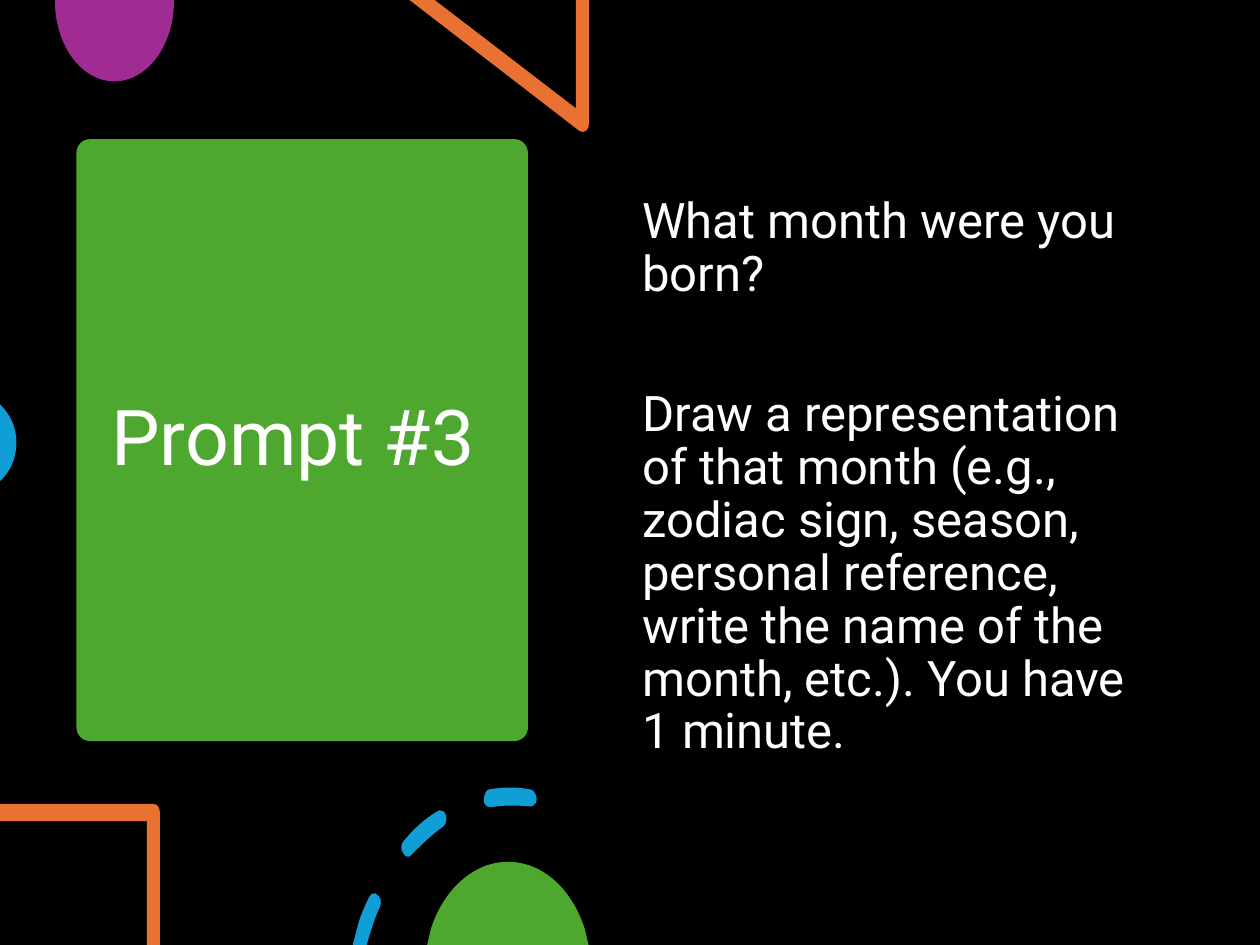
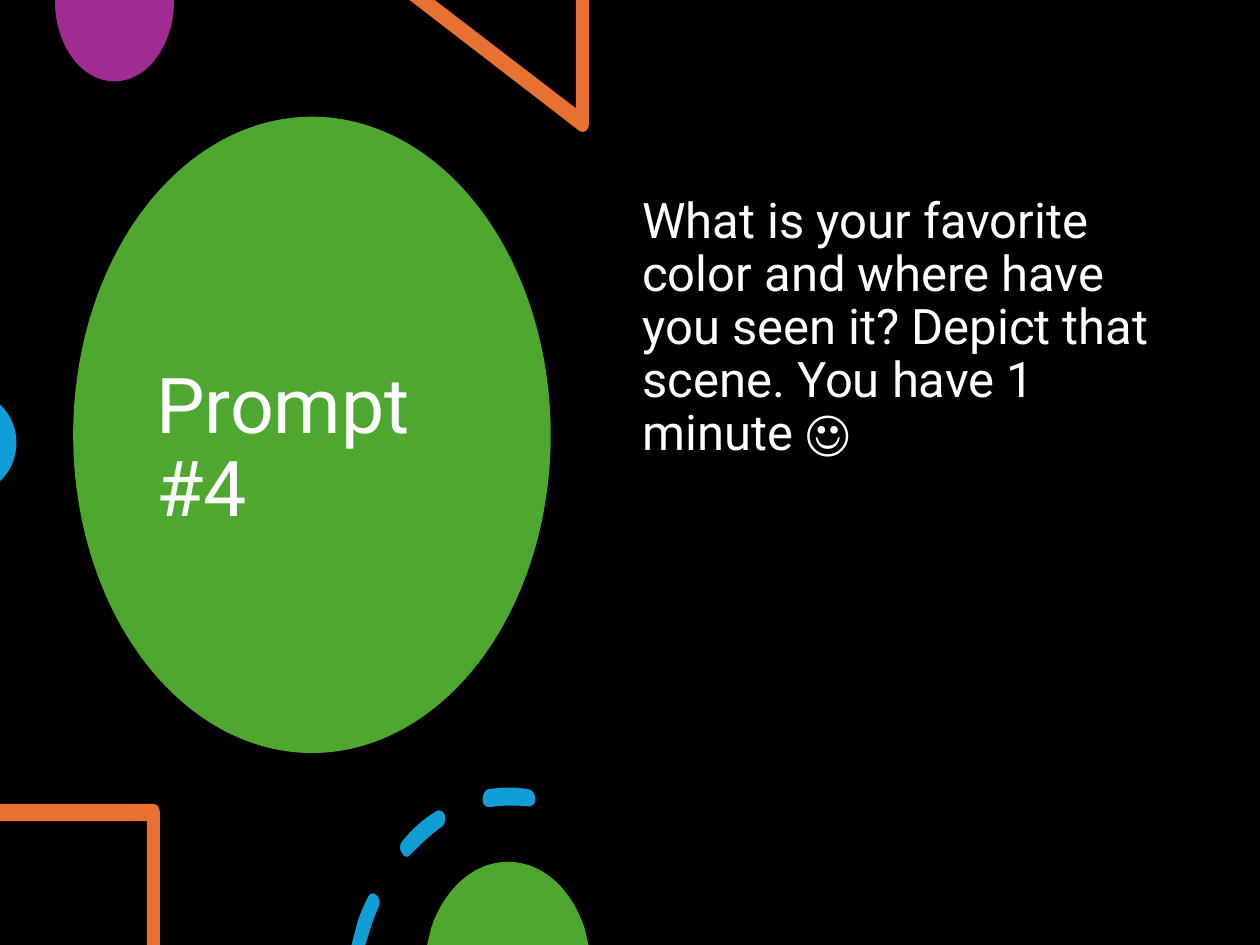
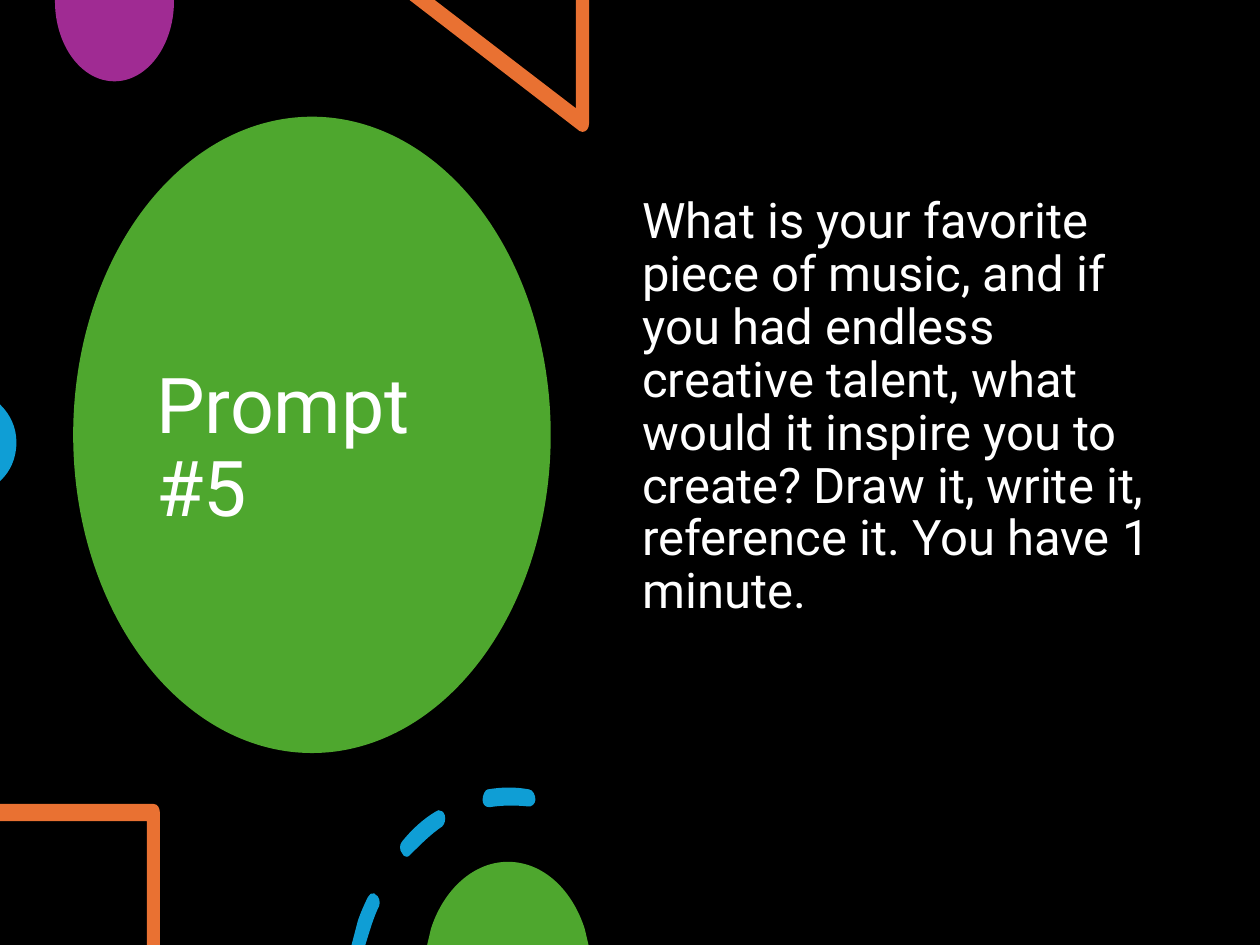
from pptx import Presentation
from pptx.dml.color import RGBColor
from pptx.enum.shapes import MSO_SHAPE
from pptx.enum.text import MSO_ANCHOR, MSO_AUTO_SIZE, PP_ALIGN
from pptx.oxml.ns import qn
from pptx.util import Pt

ELLIPSE = MSO_SHAPE.OVAL
ROUNDED = MSO_SHAPE.ROUNDED_RECTANGLE
MIDDLE, TOP = MSO_ANCHOR.MIDDLE, MSO_ANCHOR.TOP
LEFT = PP_ALIGN.LEFT
NO_FIT = MSO_AUTO_SIZE.NONE

BLACK, WHITE = "000000", "FFFFFF"
GREEN, PURPLE, ORANGE, BLUE = "4EA72E", "A02B93", "E97132", "0F9ED5"
FONT = "Roboto"
TITLE_SIZE, BODY_SIZE = 44, 28
TITLE_ONLY = 5

# Contours are relative to the part's box: pairs are corners,
# six numbers are a Bezier curve (two controls, then its end).
HALF_DISC = [[(68, 0), (0, 0), (0, 0.7), (0, 25.9, 15.1, 46.5, 34, 46.5),
              (52.8, 46.5, 68, 25.9, 68, 0.7)]]
TRIANGLE = [[(102.6, 0), (95.1, 0), (95.1, 61.9), (14.4, 0), (0, 0),
             (97.2, 74.9), (97.9, 75.4, 98.2, 75.4, 98.9, 75.4),
             (101, 75.4, 102.6, 73.4, 102.6, 70.6)]]
EDGE_DISC = [[(0, 0), (0, 43.9), (0.7, 43.2), (5.8, 38.2, 9.4, 31, 9.4, 21.6),
              (9.4, 13, 5.8, 5.8, 0.7, 0.7)]]
CORNER = [[(87.8, 0), (0, 0), (0, 9.8), (84, 9.8), (84, 80.6),
           (91.4, 80.6), (91.4, 5), (91.4, 2.2, 90, 0, 87.8, 0)]]
DASHED_ARC = [
    [(13, 60.5), (11.5, 59.8, 10.1, 61.2, 9.4, 62.6),
     (7.2, 67, 5, 72, 3.6, 76.3), (0, 90), (7.9, 90), (10.8, 80.6),
     (12.2, 76.3, 13.7, 72, 15.8, 67.7),
     (16.6, 65.5, 15.8, 61.9, 13.7, 61.2), (13.7, 60.5, 13, 60.5, 13, 60.5)],
    [(49.7, 13), (49, 13, 49, 13, 48.2, 13.7), (41, 18, 34.6, 23.8, 28.8, 31),
     (27.4, 32.4, 27.4, 36, 28.8, 37.4), (29.5, 38.9, 30.2, 39.6, 31.7, 39.6),
     (31.7, 39.6),
     (32.4, 39.6, 33.1, 38.9, 33.8, 38.2),
     (39.6, 32.4, 45.4, 26.6, 51.8, 22.3), (53.3, 20.9, 54, 18, 53.3, 15.8),
     (52.6, 13.7, 51.1, 13, 49.7, 13)],
    [(90, 0), (85.7, 0, 82.1, 0.4, 77.8, 1.1),
     (76.3, 1.4, 74.9, 4.3, 74.9, 7.2), (74.9, 9.4, 76.3, 11.2, 78.5, 11.2),
     (78.5, 11.2, 79.2, 11.2, 79.2, 11.2), (86.4, 10.1, 93.6, 10.1, 100.8, 10.8),
     (103, 11.2, 104.8, 9.4, 105.1, 7.2), (105.1, 4.3, 103.7, 1.4, 101.5, 1.1),
     (101.5, 1.1, 101.5, 1.1, 101.5, 1.1), (97.9, 0.4, 93.6, 0, 90, 0)],
]
DOME = [[(46.1, 0), (26.6, 0, 9.4, 15.8, 2.2, 38.2), (0, 47.5), (92.2, 47.5),
         (90, 38.2), (82.8, 15.8, 66.2, 0, 46.1, 0)]]

# Left, top, contours, colour
UPPER_DECOR = [(31.4, 0, HALF_DISC, PURPLE), (234, 0, TRIANGLE, ORANGE),
               (0, 231.1, EDGE_DISC, BLUE)]
CORNER_DECOR = (0, 459.4, CORNER, ORANGE)
DOME_DECOR = (244.1, 492.5, DOME, GREEN)
ARC_TOP = 450

# Card shape, card box, title box, left of the dashed arc
SQUARE_LOOK = (ROUNDED, (43.7, 79.5, 258, 344), (56.4, 87.8, 232.6, 328.3), 201.6)
ROUND_LOOK = (ELLIPSE, (41.8, 66.7, 272.9, 363.6), (82.1, 97.2, 191.5, 320.4), 200.9)
BODY_BOX = (360, 64.8, 310.3, 385.2)
BODY_TOP_INSET = 47.2
BODY_GAP = 49.8

PROMPTS = [
    ("Prompt #3", SQUARE_LOOK, [
        "What month were you born?",
        "Draw a representation of that month (e.g., zodiac sign, season, "
        "personal reference, write the name of the month, etc.). "
        "You have 1 minute."]),
    ("Prompt #4", ROUND_LOOK, [
        "What is your favorite color and where have you seen it? "
        "Depict that scene. You have 1 minute ☺"]),
    ("Prompt #5", ROUND_LOOK, [
        "What is your favorite piece of music, and if you had endless "
        "creative talent, what would it inspire you to create? "
        "Draw it, write it, reference it. You have 1 minute."]),
]


def color(code):
    return RGBColor.from_string(code)


def points(values):
    return [Pt(value) for value in values]


def paint(shape, code):
    shape.shadow.inherit = False
    shape.fill.solid()
    shape.fill.fore_color.rgb = color(code)
    shape.line.fill.background()


def bend(shape, contours):
    """Merge the three lines that stand for each Bezier step into a curve."""
    lines = iter(list(shape._element.iter(qn("a:lnTo"))))
    for contour in contours:
        for step in contour[1:]:
            segment = next(lines)
            if len(step) == 6:
                segment.tag = qn("a:cubicBezTo")
                for _ in range(2):
                    extra = next(lines)
                    segment.append(extra[0])
                    extra.getparent().remove(extra)


def add_decor(slide, left, top, contours, code):
    builder = slide.shapes.build_freeform(*points(contours[0][0]))
    for i, (start, *steps) in enumerate(contours):
        if i:
            builder.move_to(*points(start))
        corners = [points(step[j:j + 2]) for step in steps
                   for j in range(0, len(step), 2)]
        builder.add_line_segments(corners, close=True)
    decor = builder.convert_to_shape(Pt(left), Pt(top))
    bend(decor, contours)
    paint(decor, code)


def write(frame, paragraphs, size, anchor, gap=0):
    frame.word_wrap = True
    frame.auto_size = NO_FIT
    frame.vertical_anchor = anchor
    for i, words in enumerate(paragraphs):
        paragraph = frame.add_paragraph() if i else frame.paragraphs[0]
        paragraph.alignment = LEFT
        paragraph.line_spacing = 0.9
        paragraph.space_before = Pt(gap if i else 0)
        run = paragraph.add_run()
        run.text = words
        run.font.name = FONT
        run.font.size = Pt(size)
        run.font.color.rgb = color(WHITE)


def add_title_card(slide, heading, outline, card_box, title_box):
    title = slide.shapes.title
    card = slide.shapes.add_shape(outline, *points(card_box))
    if outline == ROUNDED:
        card.adjustments[0] = 0.03
    paint(card, GREEN)
    title._element.addprevious(card._element)
    title.left, title.top, title.width, title.height = points(title_box)
    write(title.text_frame, [heading], TITLE_SIZE, MIDDLE)


def add_question(slide, paragraphs, box):
    question = slide.shapes.add_textbox(*points(box)).text_frame
    question.margin_top = Pt(BODY_TOP_INSET)
    write(question, paragraphs, BODY_SIZE, TOP, BODY_GAP)


def add_prompt_slide(deck, heading, look, paragraphs):
    outline, card_box, title_box, arc_left = look
    slide = deck.slides.add_slide(deck.slide_layouts[TITLE_ONLY])
    add_title_card(slide, heading, outline, card_box, title_box)
    for part in UPPER_DECOR:
        add_decor(slide, *part)
    add_question(slide, paragraphs, BODY_BOX)
    for part in (CORNER_DECOR, (arc_left, ARC_TOP, DASHED_ARC, BLUE), DOME_DECOR):
        add_decor(slide, *part)


def main():
    deck = Presentation()
    deck.slide_width, deck.slide_height = Pt(720), Pt(540)
    backdrop = deck.slide_master.background.fill
    backdrop.solid()
    backdrop.fore_color.rgb = color(BLACK)
    for heading, look, paragraphs in PROMPTS:
        add_prompt_slide(deck, heading, look, paragraphs)
    deck.save("out.pptx")


if __name__ == "__main__":
    main()
